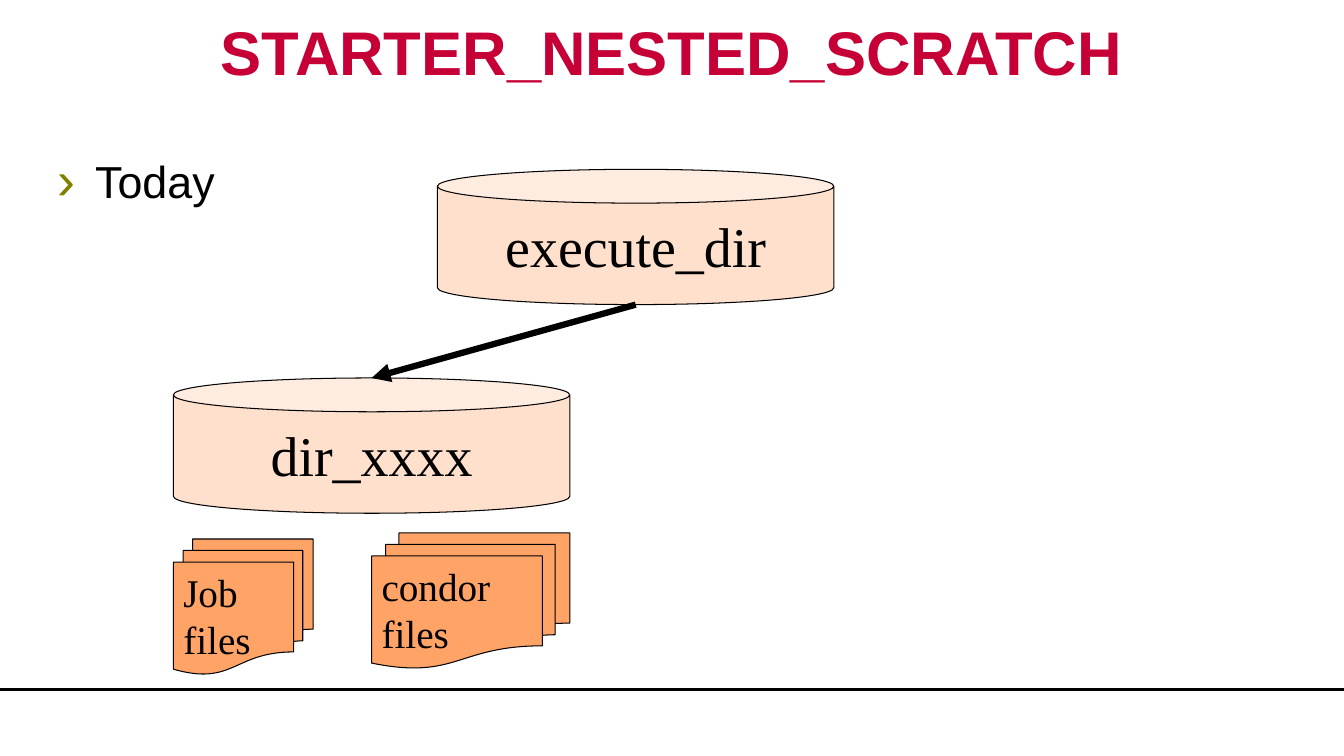
import pptx
import pptx.util
import pptx.dml.color
import pptx.enum.shapes
import pptx.enum.text
import pptx.oxml.ns
import lxml.etree

Pt = pptx.util.Pt
RGB = pptx.dml.color.RGBColor
Kind = pptx.enum.shapes.MSO_SHAPE
Align = pptx.enum.text.PP_ALIGN
Anchor = pptx.enum.text.MSO_ANCHOR
qn = pptx.oxml.ns.qn

BLACK = RGB(0x00, 0x00, 0x00)
RED = RGB(0xC6, 0x00, 0x36)
PEACH = RGB(0xFF, 0xE0, 0xCC)
ORANGE = RGB(0xFF, 0xA3, 0x66)

deck = pptx.Presentation()
deck.slide_width = pptx.util.Inches(13.333)
deck.slide_height = pptx.util.Inches(7.5)
col = deck.slide_width / 100
row = deck.slide_height / 100
slide = deck.slides.add_slide(deck.slide_layouts[6])
shapes = slide.shapes


def write(shape, lines, align, anchor, font):
    frame = shape.text_frame
    frame.word_wrap = True
    frame.vertical_anchor = anchor
    frame.text = "\n".join(lines)
    for para in frame.paragraphs:
        para.alignment = align
        for run in para.runs:
            run.font.color.rgb = font["color"]
            for name in ("name", "size", "bold"):
                setattr(run.font, name, font[name])


def draw(x1, y1, x2, y2, width):
    line = shapes.add_connector(
        pptx.enum.shapes.MSO_CONNECTOR.STRAIGHT,
        int(x1 * col), int(y1 * row), int(x2 * col), int(y2 * row))
    line.line.color.rgb = BLACK
    line.line.width = Pt(width)
    props = line._element.spPr
    lxml.etree.SubElement(props, qn("a:effectLst"))
    return props


draw(0, 91.2, 100, 91.2, 2.25)

body = shapes.add_textbox(int(3.53 * col), int(19.73 * row), int(91.9 * col), int(61.6 * row))
write(body, ["Today"], Align.LEFT, Anchor.TOP,
      {"name": "Arial", "size": Pt(32), "bold": False, "color": BLACK})
props = body.text_frame.paragraphs[0]._p.get_or_add_pPr()
indent = int(2.81 * col)
props.set("marL", str(indent))
props.set("indent", str(-indent))
tint = lxml.etree.SubElement(props, qn("a:buClr"))
lxml.etree.SubElement(tint, qn("a:srgbClr"), val="808000")
lxml.etree.SubElement(props, qn("a:buSzPct"), val="120000")
lxml.etree.SubElement(props, qn("a:buFont"), typeface="Arial")
lxml.etree.SubElement(props, qn("a:buChar"), char="›")

title = shapes.add_textbox(0, 0, int(100 * col), int(13.33 * row))
write(title, ["STARTER_NESTED_SCRATCH"], Align.CENTER, Anchor.MIDDLE,
      {"name": "Arial", "size": Pt(44), "bold": True, "color": RED})

left, wide, tall = 12.9, 29.5, 17.9
top, low = 22.4, 50
mid = 32.55
can = {"kind": Kind.CAN, "fill": PEACH, "size": 40, "align": Align.CENTER}
stack = {"kind": Kind.FLOWCHART_MULTIDOCUMENT, "fill": ORANGE, "size": 28, "align": Align.LEFT}
parts = [
    (can, mid, top, wide, ["execute_dir"]),
    (can, left, low, wide, ["dir_xxxx"]),
    (stack, left, 71.3, 10.4, ["Job", "files"]),
    (stack, left + wide / 2, 70.5, wide / 2, ["condor", "files"]),
]
for style, x, y, width, lines in parts:
    part = shapes.add_shape(style["kind"], int(x * col), int(y * row),
                            int(width * col), int(tall * row))
    part.shadow.inherit = False
    part.fill.solid()
    part.fill.fore_color.rgb = style["fill"]
    part.line.color.rgb = BLACK
    part.line.width = Pt(0.75)
    write(part, lines, style["align"], Anchor.MIDDLE,
          {"name": "Times New Roman", "size": Pt(style["size"]), "bold": False, "color": BLACK})

arrow = draw(mid + wide / 2, top + tall, left + wide / 2, low, 4.5)
lxml.etree.SubElement(arrow.find(qn("a:ln")), qn("a:tailEnd"), type="triangle")

deck.save("out.pptx")
